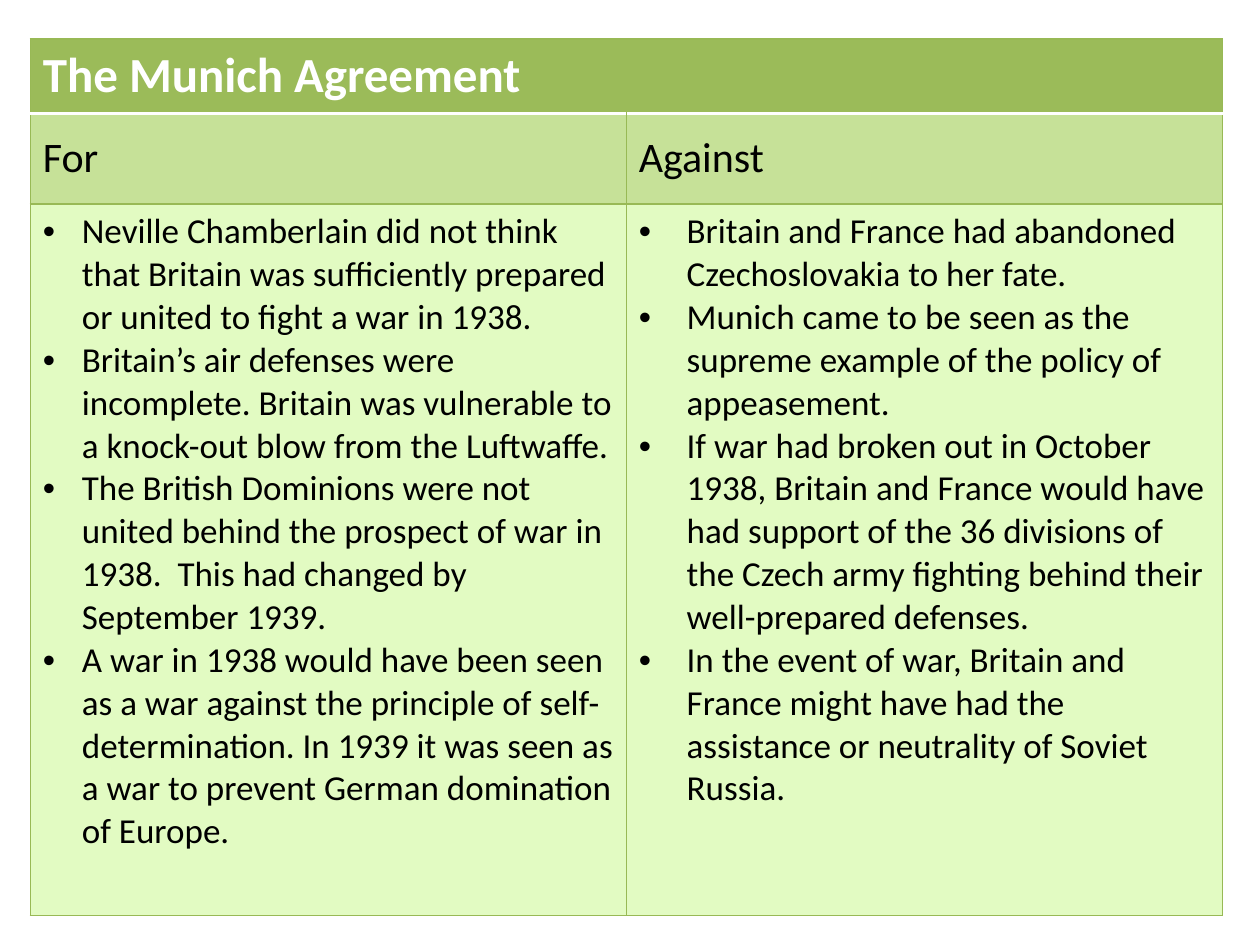
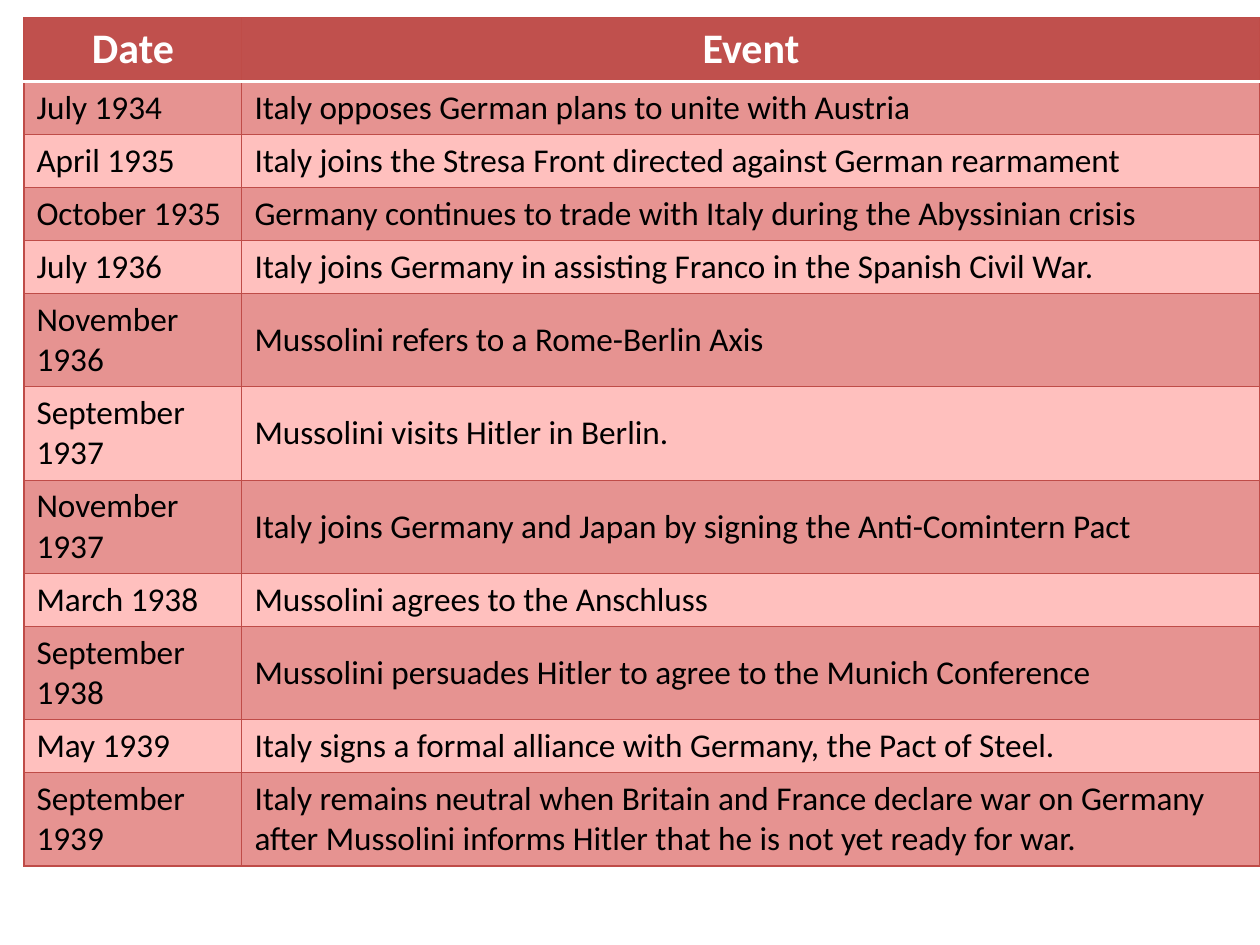
from lxml.etree import SubElement
from pptx import Presentation
from pptx.dml.color import RGBColor
from pptx.enum.text import MSO_ANCHOR, PP_ALIGN
from pptx.oxml.ns import qn
from pptx.util import Inches, Pt

FONT = "Calibri"
WHITE = RGBColor(0xFF, 0xFF, 0xFF)
BLACK = RGBColor(0x00, 0x00, 0x00)
GREEN = RGBColor(0x9B, 0xBB, 0x59)
GREEN_LINE = RGBColor(0x98, 0xB9, 0x55)
GREEN_BAND = RGBColor(0xC6, 0xE1, 0x98)
GREEN_LIGHT = RGBColor(0xE2, 0xFB, 0xC2)
RED = RGBColor(0xC0, 0x50, 0x4D)
RED_LINE = RGBColor(0xBF, 0x4C, 0x48)
RED_BAND = RGBColor(0xE6, 0x93, 0x91)
RED_LIGHT = RGBColor(0xFF, 0xC0, 0xBE)


def add_banded_table(slide, left, top, widths, heights, colors):
    """Add a table with a header row, banded body rows and thin borders."""
    header, band, light, line = colors
    table = slide.shapes.add_table(
        len(heights), len(widths), Inches(left), Inches(top),
        Inches(sum(widths)), Inches(sum(heights))).table
    for column, width in zip(table.columns, widths):
        column.width = Inches(width)
    for index, (row, height) in enumerate(zip(table.rows, heights)):
        row.height = Inches(height)
        # The header is set off from the body by a white rule
        white_edge = {0: "a:lnB", 1: "a:lnT"}.get(index)
        for cell in row.cells:
            properties = cell._tc.get_or_add_tcPr()
            for edge in ("a:lnL", "a:lnR", "a:lnT", "a:lnB"):
                is_white = edge == white_edge
                border = SubElement(properties, qn(edge),
                                    w=str(Pt(2) if is_white else Pt(0.75)))
                fill = SubElement(border, qn("a:solidFill"))
                SubElement(fill, qn("a:srgbClr"), val=str(WHITE if is_white else line))
            cell.fill.solid()
            cell.fill.fore_color.rgb = header if index == 0 else band if index % 2 else light
    return table


def write_cell(cell, text, size, color=BLACK, bold=False,
               anchor=MSO_ANCHOR.MIDDLE, alignment=PP_ALIGN.LEFT, bullet_indent=None):
    """Write text into a cell, one paragraph a line, with optional bullets."""
    cell.text_frame.text = text
    cell.vertical_anchor = anchor
    for paragraph in cell.text_frame.paragraphs:
        paragraph.alignment = alignment
        for run in paragraph.runs:
            run.font.name = FONT
            run.font.size = Pt(size)
            run.font.bold = bold
            run.font.color.rgb = color
        if bullet_indent:
            properties = paragraph._p.get_or_add_pPr()
            properties.set("marL", str(Inches(bullet_indent)))
            properties.set("indent", str(-Inches(bullet_indent)))
            SubElement(properties, qn("a:buFont"), typeface="Arial")
            SubElement(properties, qn("a:buChar"), char="•")


presentation = Presentation()
presentation.slide_width = Inches(10)
presentation.slide_height = Inches(7.5)
blank_layout = presentation.slide_layouts[6]

# Slide 1: arguments for and against the agreement
arguments = [
    ("For", 0.31, [
        "Neville Chamberlain did not think that Britain was sufficiently prepared "
        "or united to fight a war in 1938.",
        "Britain’s air defenses were incomplete. Britain was vulnerable to a "
        "knock-out blow from the Luftwaffe.",
        "The British Dominions were not united behind the prospect of war in 1938.  "
        "This had changed by September 1939.",
        "A war in 1938 would have been seen as a war against the principle of "
        "self-determination. In 1939 it was seen as a war to prevent German "
        "domination of Europe.",
    ]),
    ("Against", 0.38, [
        "Britain and France had abandoned Czechoslovakia to her fate.",
        "Munich came to be seen as the supreme example of the policy of appeasement.",
        "If war had broken out in October 1938, Britain and France would have had "
        "support of the 36 divisions of the Czech army fighting behind their "
        "well-prepared defenses.",
        "In the event of war, Britain and France might have had the assistance or "
        "neutrality of Soviet Russia.",
    ]),
]
slide = presentation.slides.add_slide(blank_layout)
table = add_banded_table(slide, 0.24, 0.31, [4.73, 4.73], [0.59, 0.72, 5.65],
                         (GREEN, GREEN_BAND, GREEN_LIGHT, GREEN_LINE))
table.cell(0, 0).merge(table.cell(0, 1))
write_cell(table.cell(0, 0), "The Munich Agreement", 28, WHITE, True)
for column, (side, indent, points) in enumerate(arguments):
    write_cell(table.cell(1, column), side, 24)
    write_cell(table.cell(2, column), "\n".join(points), 20,
               anchor=MSO_ANCHOR.TOP, bullet_indent=indent)

# Slide 2: timeline of relations between Italy and Germany
events = [
    ("July 1934", "Italy opposes German plans to unite with Austria"),
    ("April 1935", "Italy joins the Stresa Front directed against German rearmament"),
    ("October 1935", "Germany continues to trade with Italy during the Abyssinian crisis"),
    ("July 1936", "Italy joins Germany in assisting Franco in the Spanish Civil War."),
    ("November 1936", "Mussolini refers to a Rome-Berlin Axis"),
    ("September 1937", "Mussolini visits Hitler in Berlin."),
    ("November 1937", "Italy joins Germany and Japan by signing the Anti-Comintern Pact"),
    ("March 1938", "Mussolini agrees to the Anschluss"),
    ("September 1938", "Mussolini persuades Hitler to agree to the Munich Conference"),
    ("May 1939", "Italy signs a formal alliance with Germany, the Pact of Steel."),
    ("September 1939", "Italy remains neutral when Britain and France declare war on Germany "
     "after Mussolini informs Hitler that he is not yet ready for war."),
]
# Long dates wrap onto a second line
row_heights = [0.5] + [0.74 if len(date) > 12 else 0.42 for date, event in events]
slide = presentation.slides.add_slide(blank_layout)
table = add_banded_table(slide, 0.19, 0.14, [1.73, 8.08], row_heights,
                         (RED, RED_BAND, RED_LIGHT, RED_LINE))
for column, heading in enumerate(("Date", "Event")):
    write_cell(table.cell(0, column), heading, 24, WHITE, True,
               MSO_ANCHOR.TOP, PP_ALIGN.CENTER)
for row, entry in enumerate(events, start=1):
    for column, text in enumerate(entry):
        write_cell(table.cell(row, column), text, 19)

presentation.save("out.pptx")
